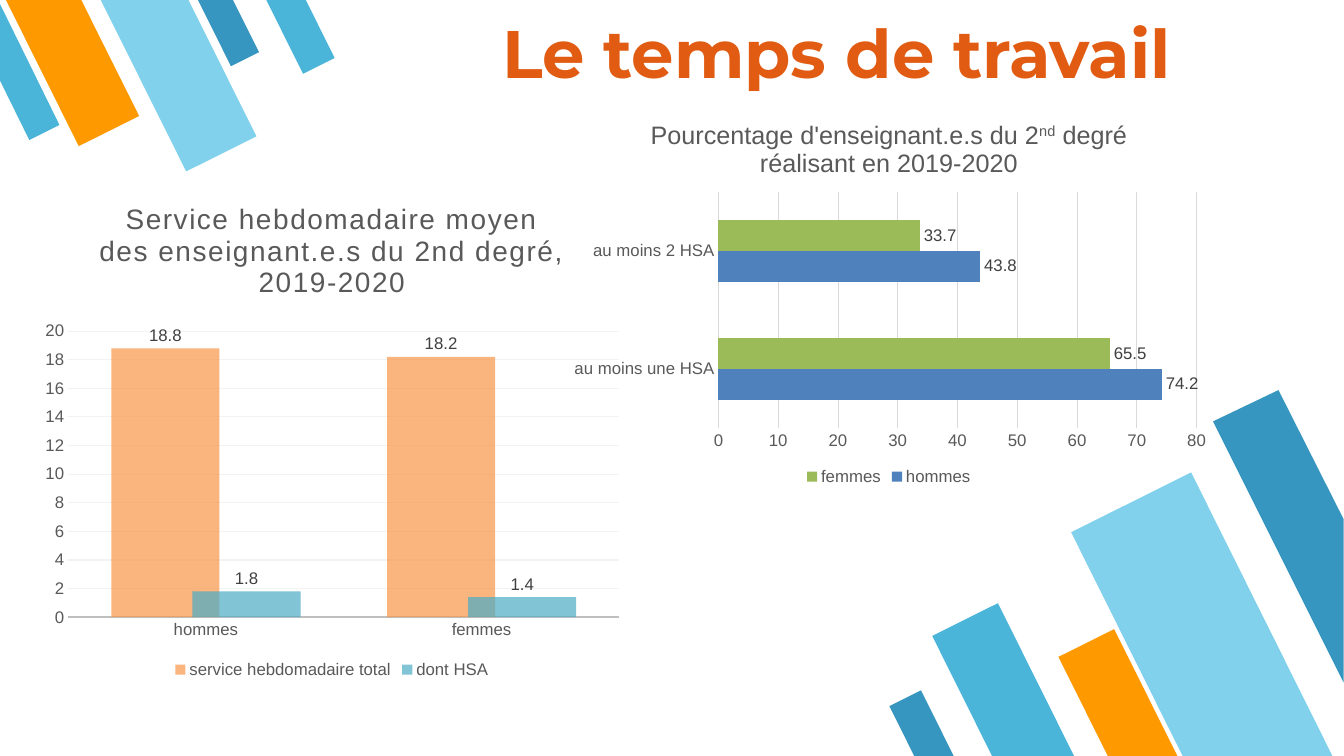
import pptx
import pptx.chart.data
import pptx.dml.color
import pptx.enum.chart
import pptx.enum.shapes
import pptx.enum.text
import pptx.oxml
import pptx.oxml.ns
import pptx.util

Cm = pptx.util.Cm
Pt = pptx.util.Pt
RGBColor = pptx.dml.color.RGBColor
XL = pptx.enum.chart

DARK_BLUE = RGBColor(0x37, 0x96, 0xBF)
BLUE = RGBColor(0x4B, 0xB5, 0xD9)
PALE_BLUE = RGBColor(0x81, 0xD1, 0xEC)
ORANGE = RGBColor(0xFF, 0x99, 0x00)
HEADING = RGBColor(0xE1, 0x5C, 0x12)
BLACK = RGBColor(0x00, 0x00, 0x00)
TEXT_GREY = RGBColor(0x59, 0x59, 0x59)
LABEL_GREY = RGBColor(0x40, 0x40, 0x40)
AXIS_GREY = RGBColor(0xBF, 0xBF, 0xBF)
GRID_GREY = RGBColor(0xD9, 0xD9, 0xD9)
PALE_GRID = RGBColor(0xF2, 0xF2, 0xF2)
TOTAL_ORANGE = RGBColor(0xF7, 0x96, 0x46)
HSA_TEAL = RGBColor(0x4B, 0xAC, 0xC6)
MEN_BLUE = RGBColor(0x4F, 0x81, 0xBD)
WOMEN_GREEN = RGBColor(0x9B, 0xBB, 0x59)


class WorkTimeSlide:
    """Draw the stripes, heading and charts of one slide in a shared style."""

    chart_font = "Arial"
    heading_font = "Montserrat"

    def __init__(self, deck):
        self.slide = deck.slides.add_slide(deck.slide_layouts[6])
        self.shapes = self.slide.shapes

    def format(self, target, formats):
        for attribute, value in formats.items():
            setattr(target, attribute, value)

    def font(self, font, size, colour, name=chart_font, bold=False):
        self.format(font, {"size": Pt(size), "name": name, "bold": bold})
        font.color.rgb = colour

    def paint(self, shape, colour):
        shape.shadow.inherit = False
        shape.fill.solid()
        shape.fill.fore_color.rgb = colour
        shape.line.fill.background()

    def stripe(self, box, rotation, colour):
        kind = pptx.enum.shapes.MSO_SHAPE.FLOWCHART_MANUAL_INPUT
        stripe = self.shapes.add_shape(kind, *map(Cm, box))
        stripe.rotation = rotation
        stripe._element.spPr.xfrm.set("flipH", "1")
        self.paint(stripe, colour)

    def cut_stripe(self, corners, colour):
        start, *others = [(Cm(x), Cm(y)) for x, y in corners]
        outline = self.shapes.build_freeform(*start)
        outline.add_line_segments(others, close=True)
        self.paint(outline.convert_to_shape(), colour)

    def heading(self, text, box):
        frame = self.shapes.add_textbox(*map(Cm, box)).text_frame
        frame.word_wrap = False
        paragraph = frame.paragraphs[0]
        paragraph.alignment = pptx.enum.text.PP_ALIGN.CENTER
        run = paragraph.add_run()
        run.text = text
        self.font(run.font, 48, HEADING, self.heading_font, True)

    def chart(self, kind, box, categories, series, title, title_size, spacing,
              bars, scale, plot, axis_line, grid, alpha=None):
        chart_data = pptx.chart.data.CategoryChartData()
        chart_data.categories = categories
        for name, values, _ in series:
            chart_data.add_series(name, values)
        chart = self.shapes.add_chart(kind, *map(Cm, box), chart_data).chart
        self.font(chart.font, 10, BLACK)
        self.chart_title(chart, title, title_size, spacing)
        chart.has_legend = True
        self.format(chart.legend, {"position": XL.XL_LEGEND_POSITION.BOTTOM,
                                   "include_in_layout": False})
        self.font(chart.legend.font, 12, TEXT_GREY)
        self.format(chart.plots[0], {"vary_by_categories": False, **bars})
        for drawn, (_, _, colour) in zip(chart.plots[0].series, series):
            self.series(drawn, colour, alpha)
        self.format(chart.value_axis, scale)
        for axis in (chart.category_axis, chart.value_axis):
            axis.major_tick_mark = XL.XL_TICK_MARK.NONE
            self.font(axis.tick_labels.font, 12, TEXT_GREY)
        chart.category_axis.has_major_gridlines = False
        chart.value_axis.has_major_gridlines = True
        chart.value_axis.format.line.fill.background()
        for line, (colour, width) in (
                (chart.category_axis.format.line, axis_line),
                (chart.value_axis.major_gridlines.format.line, (grid, 0.75))):
            line.color.rgb = colour
            line.width = Pt(width)
        self.place_plot(chart, plot)

    def chart_title(self, chart, pieces, size, spacing):
        chart.has_title = True
        chart.chart_title.include_in_layout = False
        paragraph = chart.chart_title.text_frame.paragraphs[0]
        for text, baseline in pieces:
            run = paragraph.add_run()
            run.text = text
            self.font(run.font, size, TEXT_GREY)
            properties = run._r.get_or_add_rPr()
            properties.set("spc", str(spacing))
            properties.set("baseline", str(baseline))

    def series(self, series, colour, alpha):
        series.invert_if_negative = False
        series.format.fill.solid()
        series.format.fill.fore_color.rgb = colour
        if alpha:
            tint = next(series._element.iter(pptx.oxml.ns.qn("a:srgbClr")))
            tint.append(pptx.oxml.parse_xml(
                f'<a:alpha {pptx.oxml.ns.nsdecls("a")} val="{alpha * 1000}"/>'))
        labels = series.data_labels
        self.format(labels, {"show_value": True,
                             "position": XL.XL_LABEL_POSITION.OUTSIDE_END})
        self.font(labels.font, 12, LABEL_GREY)

    def place_plot(self, chart, plot):
        area = chart._chartSpace.chart.plotArea
        for old in area.findall(pptx.oxml.ns.qn("c:layout")):
            area.remove(old)
        settings = [("layoutTarget", "inner"), ("xMode", "edge"),
                    ("yMode", "edge"), *zip("xywh", plot)]
        rules = "".join(f'<c:{tag} val="{value}"/>' for tag, value in settings)
        area.insert(0, pptx.oxml.parse_xml(
            f'<c:layout {pptx.oxml.ns.nsdecls("c")}><c:manualLayout>{rules}'
            '</c:manualLayout></c:layout>'))


def main():
    deck = pptx.Presentation()
    deck.slide_width, deck.slide_height = Cm(33.88), Cm(19.05)
    page = WorkTimeSlide(deck)

    corner_stripes = {
        153.5: [((24.43, 15.37, 1.85, 4.6), BLUE),
                ((28.68, 12.22, 3.38, 8.31), PALE_BLUE),
                ((27.46, 16, 1.57, 3.86), ORANGE),
                ((22.86, 17.48, 0.89, 2.18), DARK_BLUE)],
        333.5: [((5.33, -0.43, 0.79, 2.03), DARK_BLUE),
                ((0.94, -0.76, 1.7, 4.29), ORANGE),
                ((3.48, -0.84, 1.98, 4.98), PALE_BLUE),
                ((7.09, -0.48, 0.89, 2.26), BLUE)],
    }
    for rotation, stripes in corner_stripes.items():
        for box, colour in stripes:
            page.stripe(box, rotation, colour)
    page.cut_stripe([(32.23, 9.83), (30.58, 10.62), (33.87, 17.2),
                     (33.87, 13.08)], DARK_BLUE)
    page.cut_stripe([(0.74, 3.53), (1.5, 3.15), (0, 0.1), (0, 2.03)], BLUE)

    page.heading("Le temps de travail", (9.91, 0.15, 22.35, 2.9))

    page.chart(
        XL.XL_CHART_TYPE.COLUMN_CLUSTERED, (0.81, 4.55, 15.11, 12.65),
        ["hommes", "femmes"],
        [("service hebdomadaire total", (18.8, 18.2), TOTAL_ORANGE),
         ("dont HSA", (1.8, 1.4), HSA_TEAL)],
        [("Service hebdomadaire moyen des enseignant.e.s du 2nd degré, "
          "2019-2020", 0)], 20, 100,
        {"gap_width": 80, "overlap": 25},
        {"minimum_scale": 0, "maximum_scale": 20, "major_unit": 2},
        (0.06, 0.3, 0.92, 0.57), (AXIS_GREY, 1.25), PALE_GRID, alpha=70)

    page.chart(
        XL.XL_CHART_TYPE.BAR_CLUSTERED, (14.15, 2.59, 16.51, 9.75),
        ["au moins une HSA", "au moins 2 HSA"],
        [("hommes", (74.2, 43.8), MEN_BLUE),
         ("femmes", (65.5, 33.7), WOMEN_GREEN)],
        [("Pourcentage d'enseignant.e.s du 2", 0), ("nd", 30000),
         (" degré réalisant en 2019-2020", 0)], 18, 0,
        {"gap_width": 182, "overlap": 0},
        {"minimum_scale": 0, "maximum_scale": 80, "major_unit": 10},
        (0.24, 0.23, 0.73, 0.61), (GRID_GREY, 0.75), GRID_GREY)

    deck.save("out.pptx")


if __name__ == "__main__":
    main()
